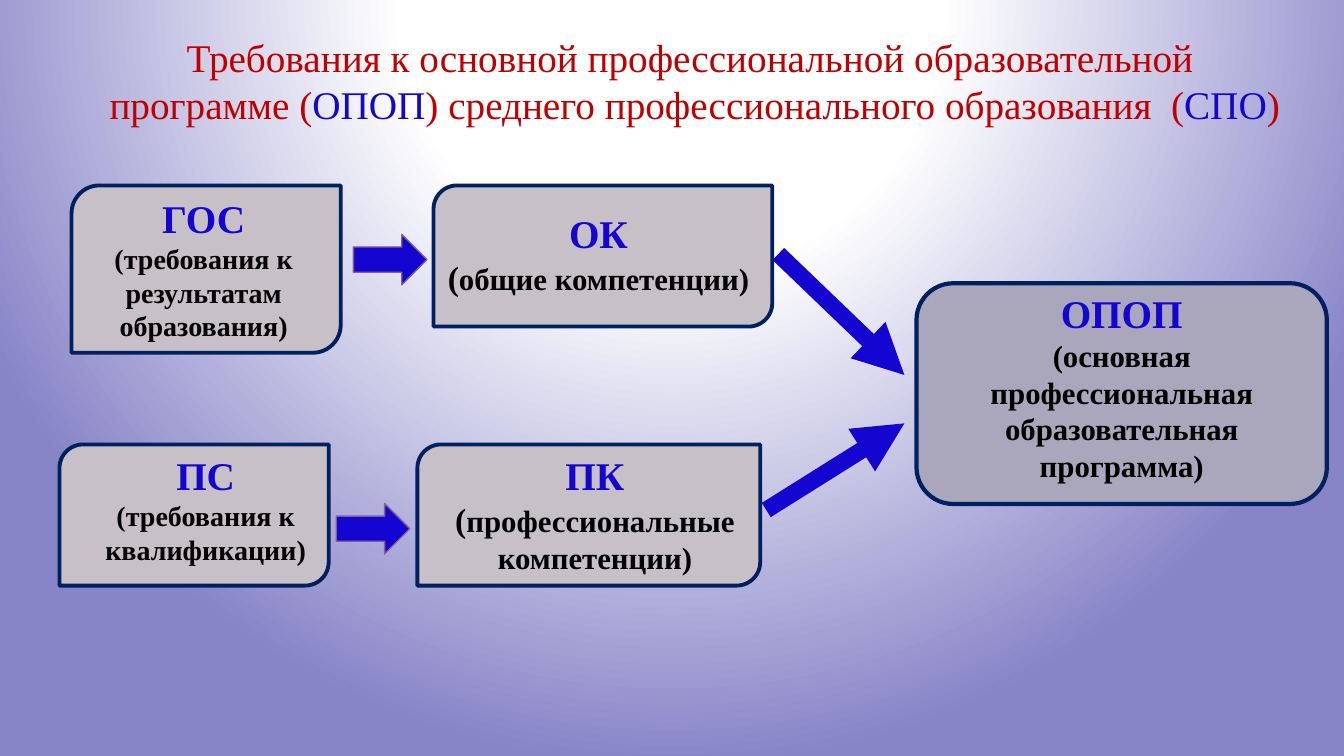
from lxml.etree import SubElement
from pptx import Presentation
from pptx.dml.color import RGBColor
from pptx.enum.shapes import MSO_CONNECTOR, MSO_SHAPE
from pptx.enum.text import MSO_ANCHOR, MSO_AUTO_SIZE, PP_ALIGN
from pptx.oxml import parse_xml
from pptx.oxml.ns import nsdecls, qn
from pptx.util import Inches, Pt

FONT = "Times New Roman"
RED, BLUE, NAVY, BLACK = "C00000", "1406D0", "002060", "000000"
CARD_FILL, PROGRAM_FILL, ARROW_EDGE = "C7C1C7", "AAA7BC", "806292"


def rgb(color):
    return RGBColor.from_string(color)


def set_background(slide):
    """Radial gradient centred above the slide."""
    fill = slide.background.fill
    fill.solid()
    properties = slide.background._cSld.bg.bgPr
    solid = properties.find(qn("a:solidFill"))
    stops = "".join(
        f'<a:gs pos="{position}"><a:srgbClr val="{color}"/></a:gs>'
        for position, color in ((0, "FFFFFF"), (35000, "FFFFFF"), (100000, "8784C7")))
    properties.replace(solid, parse_xml(
        f'<a:gradFill {nsdecls("a")} rotWithShape="1"><a:gsLst>{stops}</a:gsLst>'
        '<a:path path="circle">'
        '<a:fillToRect l="50000" t="-80000" r="50000" b="180000"/>'
        '</a:path></a:gradFill>'))


def add_text_shadow(run):
    fill = run.font._element.find(qn("a:solidFill"))
    fill.addnext(parse_xml(
        f'<a:effectLst {nsdecls("a")}><a:outerShdw blurRad="38100" dist="38100" '
        'dir="2700000" algn="tl"><a:srgbClr val="000000"><a:alpha val="43000"/>'
        '</a:srgbClr></a:outerShdw></a:effectLst>'))


def place(shape, left, top, width, height):
    shape.left, shape.top = Inches(left), Inches(top)
    shape.width, shape.height = Inches(width), Inches(height)


def add_title(slide, box, lines):
    title = slide.shapes.title
    place(title, *box)
    frame = title.text_frame
    frame.word_wrap = False
    frame.auto_size = MSO_AUTO_SIZE.SHAPE_TO_FIT_TEXT
    frame.vertical_anchor = MSO_ANCHOR.TOP
    for index, line in enumerate(lines):
        paragraph = frame.add_paragraph() if index else frame.paragraphs[0]
        paragraph.alignment = PP_ALIGN.CENTER
        paragraph.font.name, paragraph.font.size = FONT, Pt(28)
        for text, color in line:
            run = paragraph.add_run()
            run.text = text
            run.font.color.rgb = rgb(color)
            add_text_shadow(run)


def add_block(slide, kind, box, fill, line, line_width):
    shape = slide.shapes.add_shape(kind, *map(Inches, box))
    shape.shadow.inherit = False
    shape.fill.solid()
    shape.fill.fore_color.rgb = rgb(fill)
    shape.line.color.rgb = rgb(line)
    shape.line.width = Pt(line_width)
    return shape


def add_label(slide, box, heading, details):
    """Blue heading over black details; details are (text, size) runs."""
    frame = slide.shapes.add_textbox(*map(Inches, box)).text_frame
    frame.word_wrap = True
    frame.auto_size = MSO_AUTO_SIZE.SHAPE_TO_FIT_TEXT
    rows = ((frame.paragraphs[0], [(heading, 28)], BLUE),
            (frame.add_paragraph(), details, BLACK))
    for paragraph, runs, color in rows:
        paragraph.alignment = PP_ALIGN.CENTER
        paragraph.font.name, paragraph.font.bold = FONT, True
        paragraph.font.color.rgb = rgb(color)
        if len(runs) == 1:
            paragraph.font.size = Pt(runs[0][1])
        for text, size in runs:
            run = paragraph.add_run()
            run.text = text
            if len(runs) > 1:
                run.font.size = Pt(size)


def add_thick_arrow(slide, start, end):
    connector = slide.shapes.add_connector(
        MSO_CONNECTOR.STRAIGHT, *map(Inches, start + end))
    connector.line.color.rgb = rgb(BLUE)
    connector.line.width = Pt(12)
    SubElement(connector.line._get_or_add_ln(), qn("a:tailEnd"), type="triangle")
    SubElement(connector._element.spPr, qn("a:effectLst"))


def main():
    presentation = Presentation()
    presentation.slide_width, presentation.slide_height = Inches(13.33), Inches(7.5)
    slide = presentation.slides.add_slide(presentation.slide_layouts[5])
    set_background(slide)

    add_title(slide, (0.92, 0.28, 11.94, 1.04), [
        [("Требования к основной профессиональной образовательной ", RED)],
        [("программе (", RED), ("ОПОП", BLUE),
         (") среднего профессионального образования  (", RED),
         ("СПО", BLUE), (")", RED)],
    ])

    # Standards and the competencies that follow from them
    cards = [
        ((0.71, 1.84, 2.67, 1.66), (0.71, 1.88, 2.62, 1.58), "ГОС",
         [("(требования к результатам образования)", 20)]),
        ((0.59, 4.41, 2.67, 1.4), (0.82, 4.43, 2.44, 1.25), "ПС",
         [("(требования к квалификации)", 20)]),
        ((4.3, 1.84, 3.36, 1.4), (4.14, 2.03, 3.59, 0.98), "ОК",
         [("(", 24), ("общие компетенции)", 22)]),
        ((4.14, 4.41, 3.4, 1.4), (4.14, 4.43, 3.52, 1.38), "ПК",
         [("(", 24), ("профессиональные компетенции)", 22)]),
    ]
    for card_box, label_box, heading, details in cards:
        add_block(slide, MSO_SHAPE.ROUND_2_DIAG_RECTANGLE, card_box,
                  CARD_FILL, NAVY, 2.75)
        add_label(slide, label_box, heading, details)

    # Resulting programme
    add_block(slide, MSO_SHAPE.ROUNDED_RECTANGLE, (9.09, 2.81, 4.07, 2.19),
              PROGRAM_FILL, NAVY, 3)
    add_label(slide, (9.03, 2.82, 4.19, 2.05), "ОПОП",
              [("(основная профессиональная образовательная программа)", 22)])

    # Arrows between the cards, then to the programme
    for left, top in ((3.62, 2.21), (3.45, 4.88)):
        arrow = add_block(slide, MSO_SHAPE.DOWN_ARROW, (left, top, 0.5, 0.73),
                          BLUE, ARROW_EDGE, 1)
        arrow.rotation = 270
    add_thick_arrow(slide, (7.72, 2.52), (8.97, 3.72))
    add_thick_arrow(slide, (7.6, 5.06), (8.97, 4.2))

    presentation.save("out.pptx")


if __name__ == "__main__":
    main()
